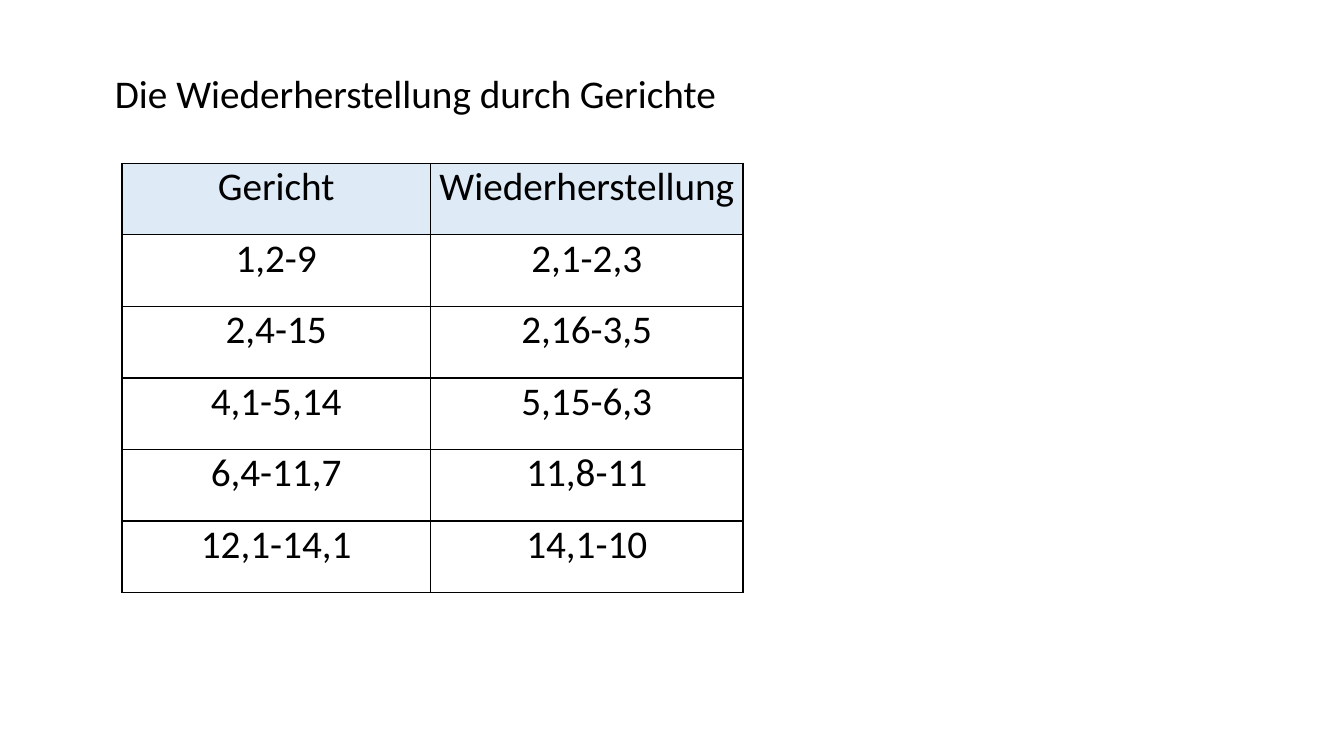
from lxml import etree
from pptx import Presentation
from pptx.dml.color import RGBColor
from pptx.enum.text import MSO_ANCHOR, MSO_AUTO_SIZE, PP_ALIGN
from pptx.oxml.ns import qn
from pptx.util import Pt

PX = 9144  # 100 px to the inch
LEFT, CENTER = PP_ALIGN.LEFT, PP_ALIGN.CENTER
TOP, MIDDLE = MSO_ANCHOR.TOP, MSO_ANCHOR.MIDDLE
NO_AUTOFIT = MSO_AUTO_SIZE.NONE
TITLE_ONLY = 5

COLORS = {"text": "000000", "border": "000000", "header": "DEEAF6"}
FONT = {"name": "Calibri", "size": Pt(28), "bold": False}
CELL_FORMAT = {
    "margin_left": 7 * PX,
    "margin_right": 7 * PX,
    "margin_top": 0,
    "margin_bottom": 0,
    "vertical_anchor": TOP,
}
TITLE_FORMAT = {"word_wrap": True, "auto_size": NO_AUTOFIT, "vertical_anchor": MIDDLE}

COLUMN_WIDTHS = [306, 310]
ROW_HEIGHT = 71
PASSAGES = [
    ("Gericht", "Wiederherstellung"),
    ("1,2-9", "2,1-2,3"),
    ("2,4-15", "2,16-3,5"),
    ("4,1-5,14", "5,15-6,3"),
    ("6,4-11,7", "11,8-11"),
    ("12,1-14,1", "14,1-10"),
]


def apply_format(target, values):
    for name, value in values.items():
        setattr(target, name, value)


def write_text(text_frame, text, alignment):
    paragraph = text_frame.paragraphs[0]
    paragraph.alignment = alignment
    run = paragraph.add_run()
    run.text = text
    apply_format(run.font, FONT)
    run.font.color.rgb = RGBColor.from_string(COLORS["text"])


def add_borders(cell):
    """Draw a thin line on all four sides, placed before the cell's fill."""
    properties = cell._tc.get_or_add_tcPr()
    for index, side in enumerate(("lnL", "lnR", "lnT", "lnB")):
        line = etree.Element(qn(f"a:{side}"), w=str(Pt(1)))
        fill = etree.SubElement(line, qn("a:solidFill"))
        etree.SubElement(fill, qn("a:srgbClr"), val=COLORS["border"])
        properties.insert(index, line)


def set_title(slide, text, left, top, width, height):
    title = slide.shapes.title
    title.left, title.top = left * PX, top * PX
    title.width, title.height = width * PX, height * PX
    apply_format(title.text_frame, TITLE_FORMAT)
    write_text(title.text_frame, text, LEFT)


def format_cell(cell, text, is_header):
    apply_format(cell, CELL_FORMAT)
    write_text(cell.text_frame, text, CENTER)
    if is_header:
        cell.fill.solid()
        cell.fill.fore_color.rgb = RGBColor.from_string(COLORS["header"])
    else:
        cell.fill.background()
    add_borders(cell)


def add_passage_table(slide, left, top):
    row_count, column_count = len(PASSAGES), len(COLUMN_WIDTHS)
    table = slide.shapes.add_table(
        row_count, column_count, left * PX, top * PX,
        sum(COLUMN_WIDTHS) * PX, row_count * ROW_HEIGHT * PX,
    ).table
    for column, width in zip(table.columns, COLUMN_WIDTHS):
        column.width = width * PX
    table.first_row = table.horz_banding = False
    for row_index, passages in enumerate(PASSAGES):
        for column_index, text in enumerate(passages):
            format_cell(table.cell(row_index, column_index), text, row_index == 0)


def main():
    presentation = Presentation()
    presentation.slide_width, presentation.slide_height = 1333 * PX, 750 * PX
    slide = presentation.slides.add_slide(presentation.slide_layouts[TITLE_ONLY])
    set_title(slide, "Die Wiederherstellung durch Gerichte", 104, 64, 640, 57)
    add_passage_table(slide, 121, 162)
    presentation.save("out.pptx")


if __name__ == "__main__":
    main()
